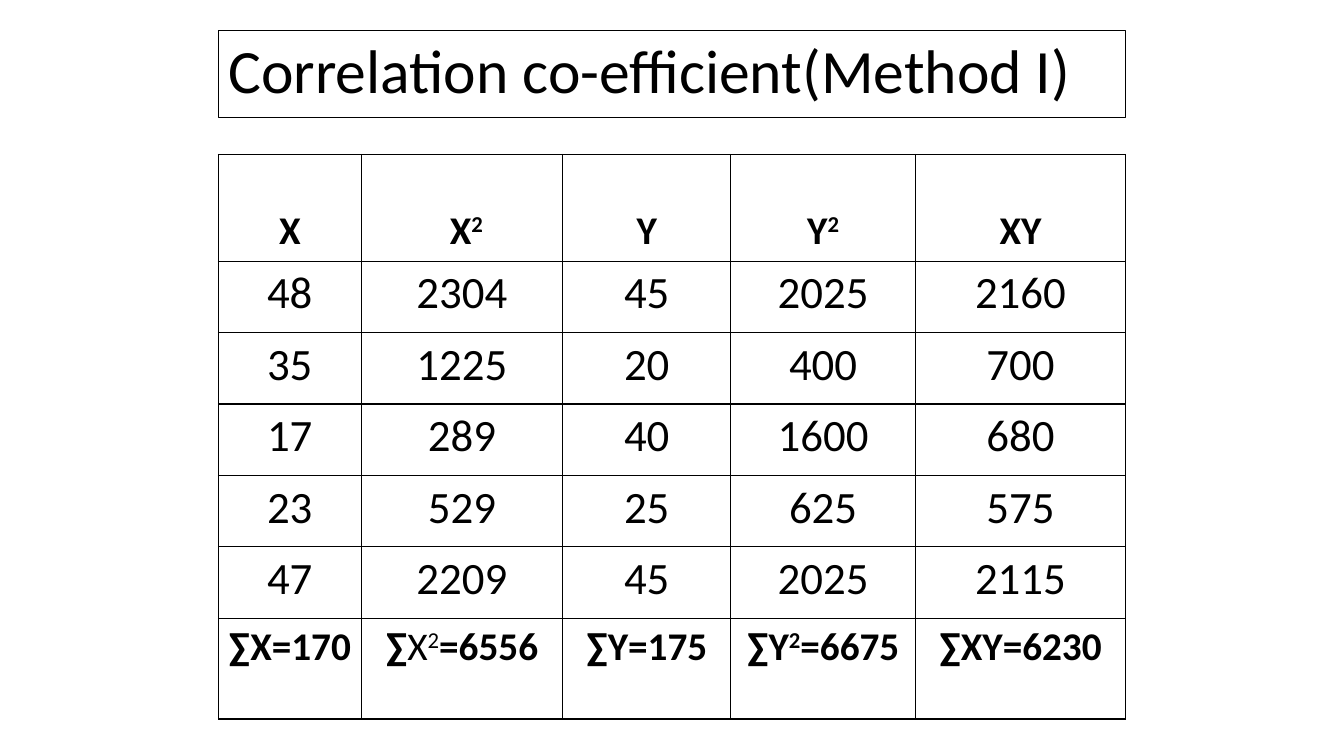
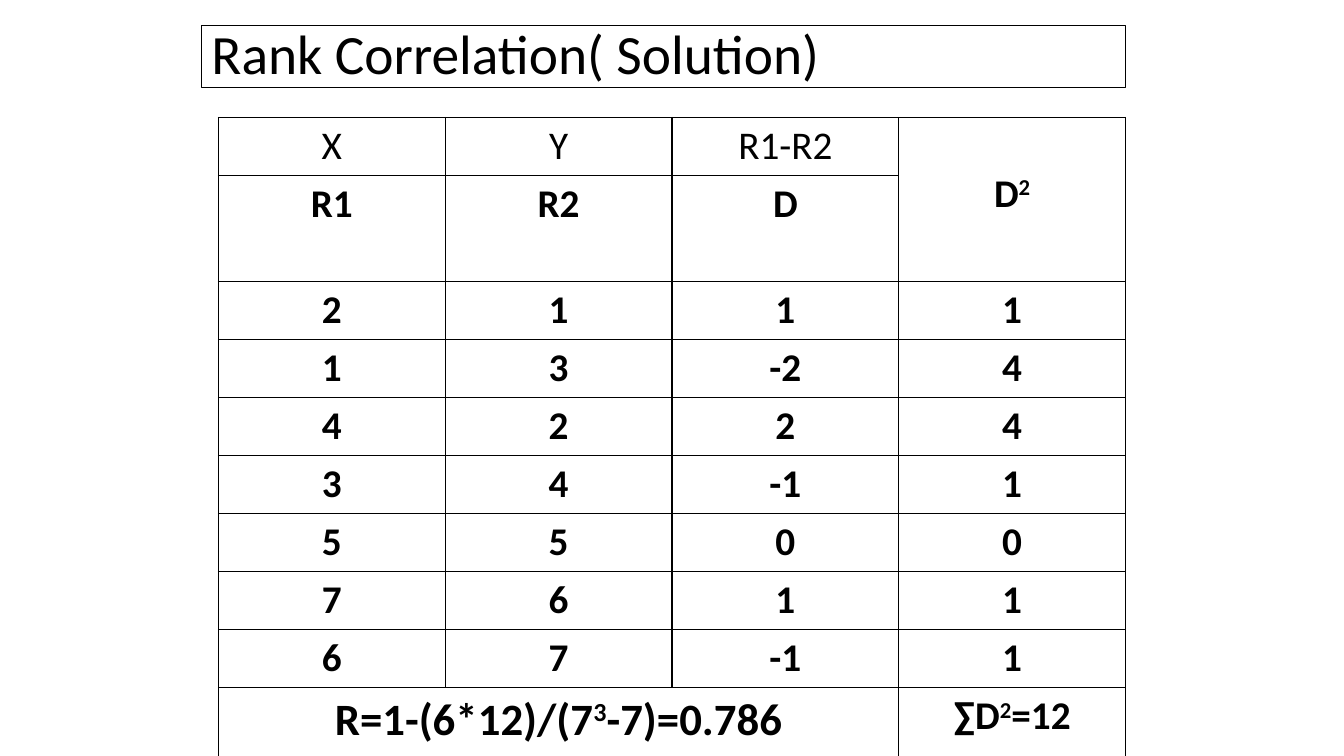
from lxml import etree
from pptx import Presentation
from pptx import util as u
from pptx.dml.color import RGBColor
from pptx.enum import shapes, text
from pptx.oxml import ns

WIDTH, HEIGHT = 13.33, 7.5
GRID_COLS, GRID_ROWS = 160, 90
INK, PAPER, FONT = "000000", "FFFFFF", "Calibri"
TABLE_LEFT = 26
CELL_INSET, BLANK_LINE = 0.05, 0.47


def rgb(value):
    return RGBColor.from_string(value)


def col(n):
    return u.Inches(WIDTH * n / GRID_COLS)


def row(n):
    return u.Inches(HEIGHT * n / GRID_ROWS)


def set_font(p, size):
    p.font.name = FONT
    p.font.size = u.Pt(size)
    p.font.color.rgb = rgb(INK)


def add_title(s, wording, left, top, width, height, size):
    sp = s.shapes.add_shape(shapes.MSO_SHAPE.RECTANGLE,
                            col(left), row(top), col(width), row(height))
    sp.shadow.inherit = False
    sp.fill.background()
    sp.line.color.rgb = rgb(INK)
    sp.line.width = u.Pt(0.75)
    tf = sp.text_frame
    tf.word_wrap = True
    tf.vertical_anchor = text.MSO_ANCHOR.MIDDLE
    p = tf.paragraphs[0]
    p.text = wording
    p.alignment = text.PP_ALIGN.LEFT
    p.line_spacing = 0.9
    set_font(p, size)


def add_borders(cell):
    tc_pr = cell._tc.get_or_add_tcPr()
    for i, side in enumerate(("lnL", "lnR", "lnT", "lnB")):
        ln = etree.Element(ns.qn("a:" + side), w=str(u.Pt(1)))
        fill = etree.SubElement(ln, ns.qn("a:solidFill"))
        etree.SubElement(fill, ns.qn("a:srgbClr"), val=INK)
        tc_pr.insert(i, ln)


def add_run(p, wording, bold, raised=False):
    if wording:
        r = p.add_run()
        r.text = wording
        r.font.bold = bold
        if raised:
            r.font._element.set("baseline", "30000")


def write_cell(cell, wording, size=28, bold=True, lowered=False):
    """In wording, ^ raises the next character and | switches bold."""
    if lowered:
        cell.margin_top = u.Inches(CELL_INSET + BLANK_LINE)
    p = cell.text_frame.paragraphs[0]
    p.alignment = text.PP_ALIGN.CENTER
    set_font(p, size)
    for i, part in enumerate(wording.split("|")):
        weight = bold != bool(i % 2)
        base, *powers = part.split("^")
        add_run(p, base, weight)
        for power in powers:
            add_run(p, power[0], weight, raised=True)
            add_run(p, power[1:], weight)


def add_table(s, top, widths, heights):
    frame = s.shapes.add_table(len(heights), len(widths), col(TABLE_LEFT), row(top),
                               col(sum(widths)), row(sum(heights)))
    table = frame.table
    for column, width in zip(table.columns, widths):
        column.width = col(width)
    for line, height in zip(table.rows, heights):
        line.height = row(height)
    for cell in table.iter_cells():
        cell.fill.solid()
        cell.fill.fore_color.rgb = rgb(PAPER)
        add_borders(cell)
    return table


def write_row(table, index, wordings, **style):
    for c, wording in enumerate(wordings):
        write_cell(table.cell(index, c), wording, **style)


def build_coefficient(s):
    add_title(s, "Correlation co-efficient(Method I)", TABLE_LEFT, 3.6, 108, 10.4, 44)
    pairs = [(48, 45), (35, 20), (17, 40), (23, 25), (47, 45)]
    table = add_table(s, 18.4, [17, 24, 20, 22, 25], [12.7] + [8.5] * len(pairs) + [12])
    write_row(table, 0, ["X", " X^2", "Y", "Y^2", "XY"], lowered=True)
    for i, (x, y) in enumerate(pairs, 1):
        write_row(table, i, map(str, (x, x * x, y, y * y, x * y)), size=32, bold=False)
    totals = ["∑X=170", "∑|X^2|=6556", "∑Y=175", "∑Y^2=6675", "∑XY=6230"]
    write_row(table, len(pairs) + 1, totals)


def build_rank(s):
    add_title(s, "Rank Correlation( Solution)", 24, 3, 110, 7.4, 39.6)
    ranks = [(2, 1), (1, 3), (4, 2), (3, 4), (5, 5), (7, 6), (6, 7)]
    table = add_table(s, 14, [27] * 4, [6.9, 12.6] + [6.9] * len(ranks) + [8.2])
    last = len(ranks) + 2
    table.cell(0, 3).merge(table.cell(1, 3))
    table.cell(last, 0).merge(table.cell(last, 2))
    write_row(table, 0, ["X", "Y", "R1-R2"], bold=False)
    write_cell(table.cell(0, 3), "D^2", lowered=True)
    write_row(table, 1, ["R1", "R2", "D"])
    for i, (r1, r2) in enumerate(ranks, 2):
        d = r1 - r2
        write_row(table, i, map(str, (r1, r2, d, d * d)))
    write_cell(table.cell(last, 0), "R=1-(6*12)/(7^3-7)=0.786", size=32)
    write_cell(table.cell(last, 3), "∑D^2=12")


def main():
    prs = Presentation()
    prs.slide_width, prs.slide_height = u.Inches(WIDTH), u.Inches(HEIGHT)
    for build in (build_coefficient, build_rank):
        build(prs.slides.add_slide(prs.slide_layouts[6]))
    prs.save("out.pptx")


if __name__ == "__main__":
    main()
